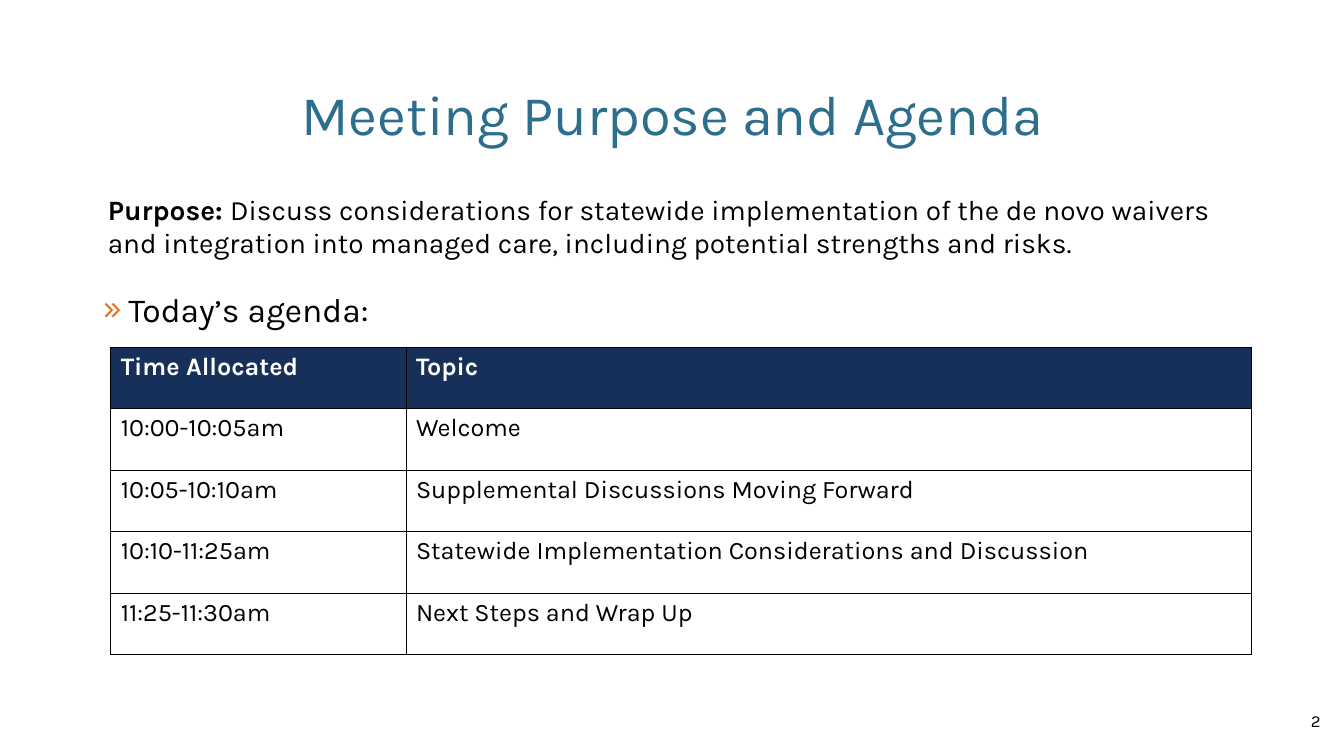
from lxml.etree import SubElement
from pptx import Presentation
from pptx.dml.color import RGBColor as Rgb
from pptx.enum.shapes import MSO_SHAPE as Shape
from pptx.enum.text import MSO_ANCHOR as Anchor, MSO_AUTO_SIZE as AutoSize, PP_ALIGN as Align
from pptx.oxml import parse_xml
from pptx.oxml.ns import nsdecls, qn
from pptx.util import Cm, Pt

COLORS = {
    "title": "2D6E8D",
    "text": "000000",
    "accent": "E37124",
    "header": "173059",
    "paper": "FFFFFF",
}
FONT = "Karla"
LEFT, WIDTH = 2.34, 29.21

AGENDA = [
    ("Time Allocated", "Topic"),
    ("10:00-10:05am", "Welcome"),
    ("10:05-10:10am", "Supplemental Discussions Moving Forward"),
    ("10:10-11:25am", "Statewide Implementation Considerations and Discussion"),
    ("11:25-11:30am", "Next Steps and Wrap Up"),
]


def color(name):
    return Rgb.from_string(COLORS[name])


def add_span(para, text, size, tint="text", bold=False):
    span = para.add_run()
    span.text = text
    for key, value in {"name": FONT, "size": Pt(size), "bold": bold}.items():
        setattr(span.font, key, value)
    span.font.color.rgb = color(tint)


def place(box, left, top, width, height):
    places = {"left": left, "top": top, "width": width, "height": height}
    for key, value in places.items():
        setattr(box, key, Cm(value))


def format_frame(box, anchor=Anchor.MIDDLE, align=Align.LEFT):
    """Sets up the text frame and returns its first paragraph."""
    frame = box.text_frame
    values = {"word_wrap": True, "auto_size": AutoSize.NONE, "vertical_anchor": anchor}
    for key, value in values.items():
        setattr(frame, key, value)
    para = frame.paragraphs[0]
    para.alignment = align
    return para


def add_bullet(para, mark, tint, indent):
    props = para._p.get_or_add_pPr()
    props.set("marL", str(Cm(indent)))
    props.set("indent", str(-Cm(indent)))
    bullet_color = SubElement(props, qn("a:buClr"))
    SubElement(bullet_color, qn("a:srgbClr"), val=COLORS[tint])
    SubElement(props, qn("a:buFont"), typeface=FONT)
    SubElement(props, qn("a:buChar"), char=mark)


def add_title(page, text):
    box = page.shapes.title
    place(box, LEFT, 1.02, WIDTH, 3.68)
    add_span(format_frame(box, align=Align.CENTER), text, 40, "title")


def add_list(page, text):
    box = page.placeholders[1]
    place(box, LEFT, 7.14, WIDTH, 11.02)
    para = format_frame(box, Anchor.TOP)
    add_bullet(para, "»", "accent", 0.64)
    para.space_before, para.space_after = Pt(0), Pt(6)
    add_span(para, text, 24)


def add_purpose(page, label, text):
    box = page.shapes.add_shape(
        Shape.ROUNDED_RECTANGLE, Cm(LEFT), Cm(4.37), Cm(WIDTH), Cm(2.64))
    box.shadow.inherit = False
    box.fill.solid()
    box.fill.fore_color.rgb = color("paper")
    box.line.color.rgb = color("paper")
    box.line.width = Pt(0.5)
    para = format_frame(box)
    add_span(para, label, 20, bold=True)
    add_span(para, text, 20)


def add_borders(cell):
    props = cell._tc.get_or_add_tcPr()
    for index, side in enumerate("LRTB"):
        props.insert(index, parse_xml(
            f'<a:ln{side} {nsdecls("a")} w="{Pt(0.5)}"><a:solidFill>'
            f'<a:srgbClr val="{COLORS["text"]}"/></a:solidFill></a:ln{side}>'))


def add_agenda(page, rows, widths, row_height):
    table = page.shapes.add_table(
        len(rows), len(widths), Cm(2.79), Cm(8.74),
        Cm(sum(widths)), Cm(row_height * len(rows))).table
    for column, width in zip(table.columns, widths):
        column.width = Cm(width)
    for row_index, texts in enumerate(rows):
        is_header = row_index == 0
        for column_index, text in enumerate(texts):
            cell = table.cell(row_index, column_index)
            cell.fill.solid()
            cell.fill.fore_color.rgb = color("header" if is_header else "paper")
            add_borders(cell)
            add_span(cell.text_frame.paragraphs[0], text, 18,
                     "paper" if is_header else "text", is_header)


def add_page_number(page, number):
    box = page.shapes.add_textbox(Cm(25.91), Cm(17.65), Cm(7.62), Cm(1.02))
    add_span(format_frame(box, align=Align.RIGHT), number, 12)


def main():
    deck = Presentation()
    deck.slide_width, deck.slide_height = Cm(33.87), Cm(19.05)
    page = deck.slides.add_slide(deck.slide_layouts[1])

    # Heading and introduction
    add_title(page, "Meeting Purpose and Agenda")
    add_list(page, "Today’s agenda:")
    add_purpose(
        page, "Purpose: ",
        "Discuss considerations for statewide implementation of the de novo waivers "
        "and integration into managed care, including potential strengths and risks.")

    # Agenda table and footer
    add_agenda(page, AGENDA, widths=(7.44, 21.31), row_height=1.55)
    add_page_number(page, "2")

    deck.save("out.pptx")


if __name__ == "__main__":
    main()
